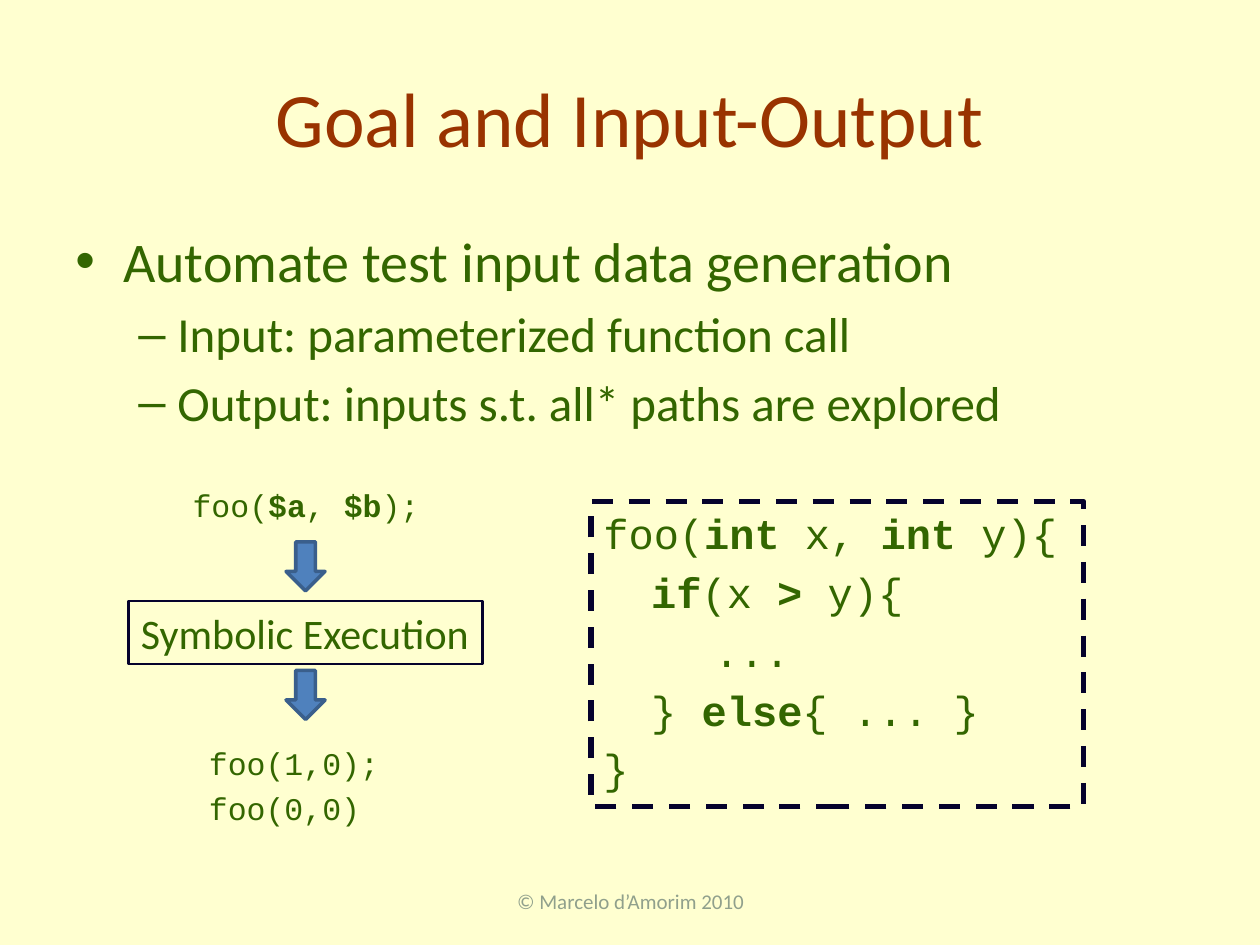
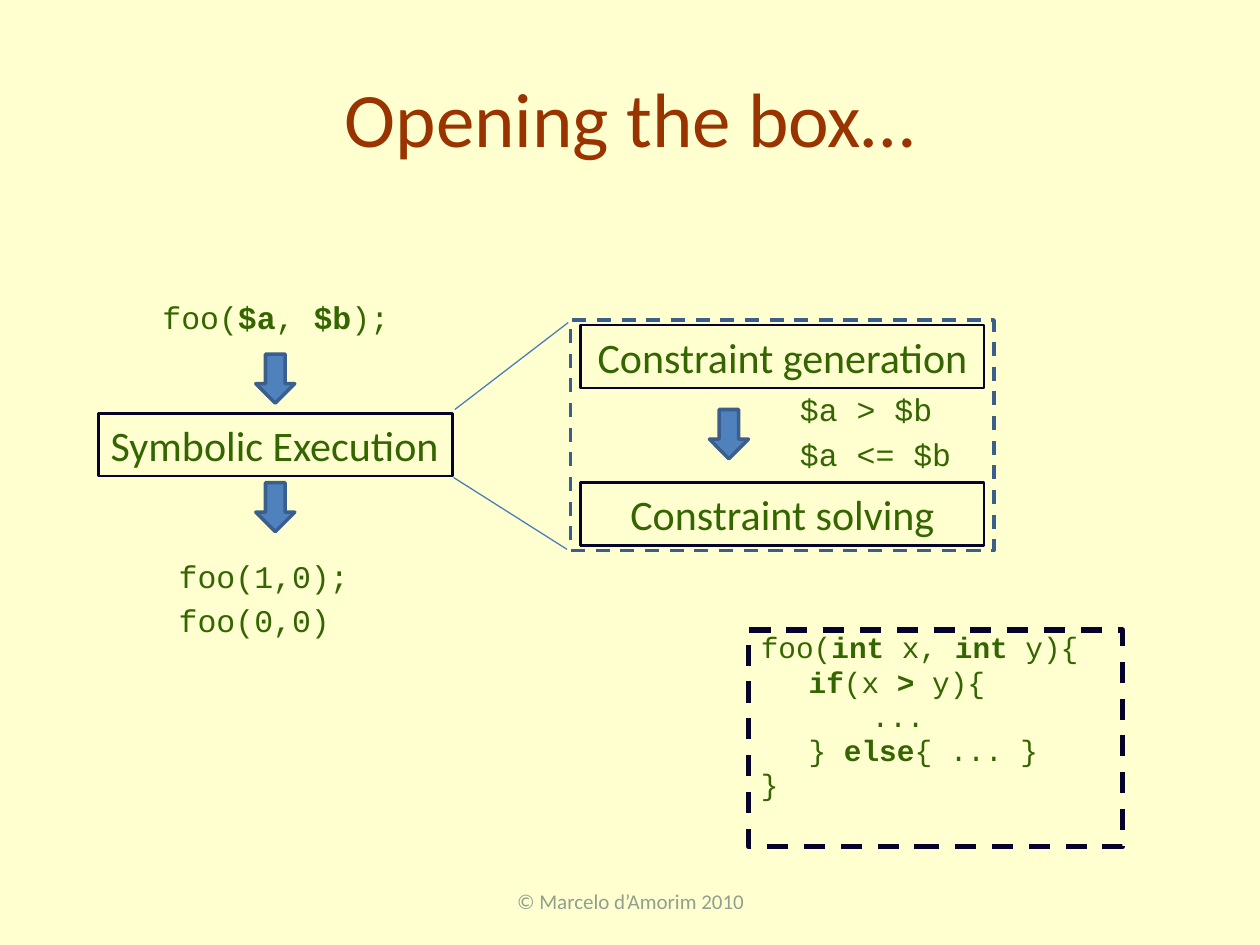
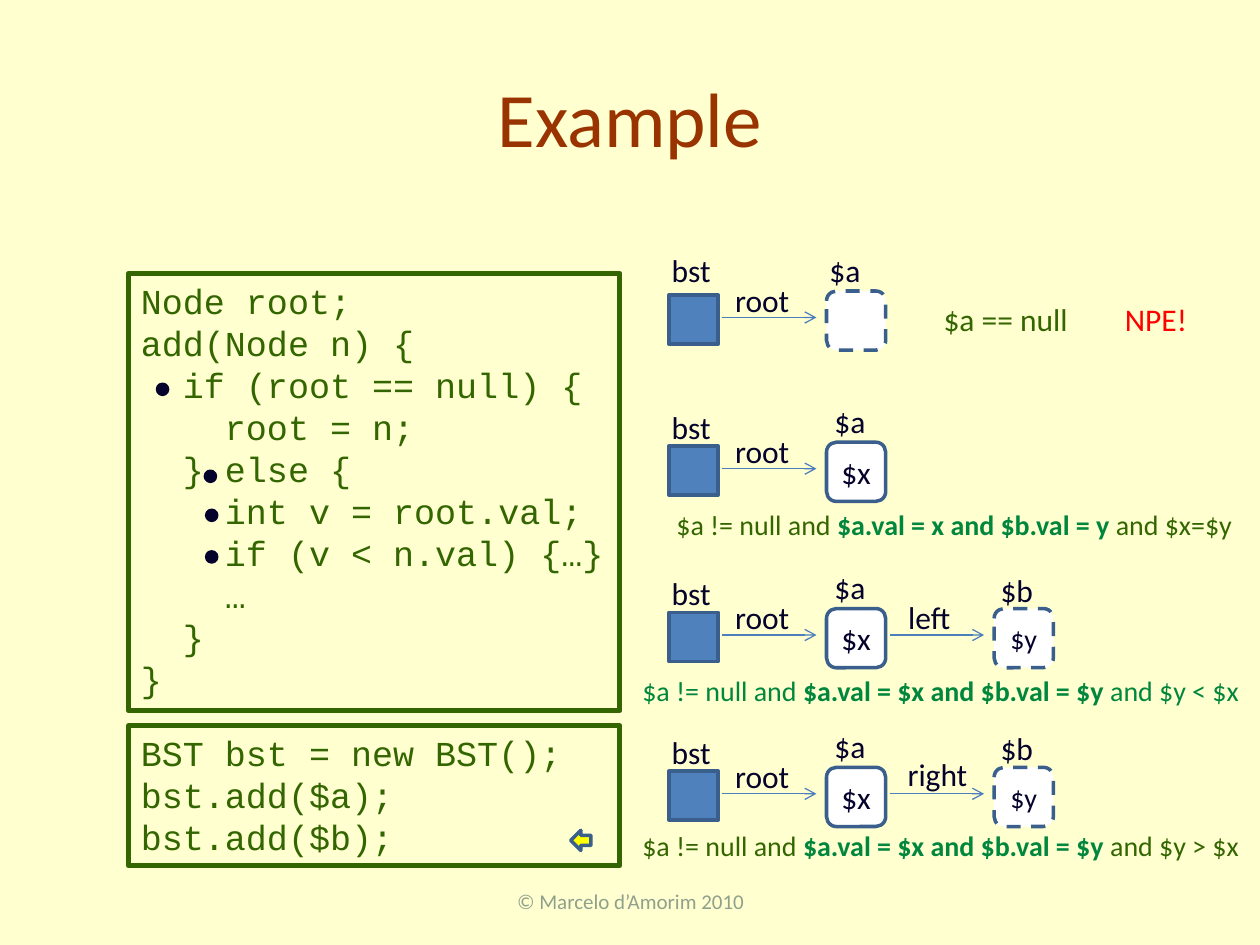
"""Build three slides on symbolic execution."""
from dataclasses import dataclass

from lxml import etree
from pptx import Presentation
from pptx import util as u
from pptx.dml import color
from pptx.enum import dml, shapes, text
from pptx.oxml import ns

COLORS = {
    "paper": "FFFFD0", "title": "993300", "body": "336600", "footer": "90A08C",
    "ink": "05022C", "blue": "4F81BD", "edge": "3A5F8C", "wire": "4B7EBC",
    "white": "FFFFFF", "yellow": "FFFF00", "green": "00863D", "red": "FF0000",
}
SANS, MONO = "Calibri", "Courier New"
SHAPE = shapes.MSO_SHAPE
CENTER = text.PP_ALIGN.CENTER
MIDDLE = text.MSO_ANCHOR.MIDDLE
FOO_CODE = ["foo(|int| x, |int| y){", "\t|if|(x |>| y){", "\t\t...", "\t} |else|{ ... }", "}"]
CODE_FORMAT = dict(face=MONO, indent=0.38, hang=0.38, gap=0.2)


@dataclass
class Bullet:
    words: str
    size: float
    mark: str
    indent: float
    hang: float
    level: int


@dataclass
class TreeState:
    top: float
    condition: str
    condition_at: tuple[float, float, float]
    tone: str = "body"
    value: str = ""
    branch: str = ""
    branch_width: float = 0.55
    branch_rise: float = 0.16
    bst_rise: float = 0.35
    a_left: float = 6.52


def rgb(name: str) -> color.RGBColor:
    """Return the named colour."""
    return color.RGBColor.from_string(COLORS[name])


def fill_para(para, words: str, *, size: float, face: str = SANS, tone: str = "body",
              bold_tone: str = "", align=None, indent: float = 0, hang: float = 0,
              mark: str = "", level: int = 0, before: float = 0, line: float = 0) -> None:
    """Fill a paragraph, with bold spans set between bars."""
    para.level = level
    para.alignment = align
    if before:
        para.space_before = u.Pt(before)
    if line:
        para.line_spacing = line
    if indent:
        props = para._p.get_or_add_pPr()
        props.set("marL", str(u.Inches(indent)))
        props.set("indent", str(u.Inches(-hang)))
        if mark:
            etree.SubElement(props, ns.qn("a:buFont")).set("typeface", "Arial")
            etree.SubElement(props, ns.qn("a:buChar")).set("char", mark)
    for index, piece in enumerate(words.split("|")):
        if piece:
            bold = index % 2 == 1
            span = para.add_run()
            span.text = piece
            span.font.name, span.font.size, span.font.bold = face, u.Pt(size), bold
            span.font.color.rgb = rgb(bold_tone if bold and bold_tone else tone)


def write(box, lines: list[str], *, size: float, anchor=text.MSO_ANCHOR.TOP,
          wrap: bool = True, gap: float = 0, **style) -> None:
    """Write lines of one format into a box."""
    frame = box.text_frame
    frame.word_wrap, frame.vertical_anchor = wrap, anchor
    for index, words in enumerate(lines):
        para = frame.add_paragraph() if index else frame.paragraphs[0]
        before = gap * size if index else 0
        fill_para(para, words, size=size, before=before, **{"align": text.PP_ALIGN.LEFT, **style})


def add_text(page, left: float, top: float, width: float, height: float,
             *lines: str, **style) -> None:
    """Add a text box."""
    box = page.shapes.add_textbox(*map(u.Inches, (left, top, width, height)))
    write(box, list(lines), **style)


def add_label(page, left: float, top: float, width: float, words: str, **style) -> None:
    """Add a one-line label that does not wrap."""
    add_text(page, left, top, width, 0.4, words,
             **{"size": 18, "wrap": False, "align": CENTER, "tone": "ink", **style})


def add_box(page, kind, left: float, top: float, width: float, height: float, *,
            fill: str = "", edge: str = "edge", weight: float = 2, dashed: bool = False):
    """Add a preset shape."""
    box = page.shapes.add_shape(kind, *map(u.Inches, (left, top, width, height)))
    box.shadow.inherit = False
    if fill:
        box.fill.solid()
        box.fill.fore_color.rgb = rgb(fill)
    else:
        box.fill.background()
    box.line.color.rgb = rgb(edge)
    box.line.width = u.Pt(weight)
    if dashed:
        box.line.dash_style = dml.MSO_LINE.DASH
    return box


def add_wire(page, start: tuple[float, float], end: tuple[float, float],
             arrow: bool = False) -> None:
    """Add a thin line, with an arrowhead at its end if asked."""
    wire = page.shapes.add_connector(shapes.MSO_CONNECTOR.STRAIGHT,
                                     *map(u.Inches, (*start, *end)))
    wire.line.color.rgb = rgb("wire")
    wire.line.width = u.Pt(0.75)
    props = wire._element.spPr
    if arrow:
        etree.SubElement(props.find(ns.qn("a:ln")), ns.qn("a:tailEnd")).set("type", "arrow")
    etree.SubElement(props, ns.qn("a:effectLst"))


def add_page(deck, title: str):
    """Add a slide with its background, title and footer."""
    page = deck.slides.add_slide(deck.slide_layouts[6])
    page.background.fill.solid()
    page.background.fill.fore_color.rgb = rgb("paper")
    add_text(page, 0.5, 0.3, 9, 1.25, title, size=44, tone="title",
             align=CENTER, anchor=MIDDLE)
    add_text(page, 3.42, 6.95, 3.17, 0.4, "© Marcelo d’Amorim 2010", size=12,
             tone="footer", align=CENTER, anchor=MIDDLE)
    return page


def add_step(page, left: float, top: float, width: float, words: str, align=CENTER) -> None:
    """Add a framed process step."""
    box = add_box(page, SHAPE.RECTANGLE, left, top, width, 0.5, edge="ink", weight=1.5)
    write(box, [words], size=24, align=align)


def add_down_arrow(page, left: float, top: float) -> None:
    """Add a block arrow between two steps."""
    add_box(page, SHAPE.DOWN_ARROW, left, top, 0.31, 0.39, fill="blue")


def add_execution_flow(page, left: float, top: float) -> None:
    """Draw the flow from symbolic call to concrete calls around its step."""
    add_step(page, left, top, 2.81, "Symbolic Execution", align=text.PP_ALIGN.LEFT)
    for offset in (-0.47, 0.55):
        add_down_arrow(page, left + 1.25, top + offset)
    add_text(page, left + 0.41, top - 0.96, 2.01, 0.4, "foo(|$a|, |$b|);",
             size=18, wrap=False, **CODE_FORMAT)
    add_text(page, left + 0.54, top + 1.09, 1.56, 0.77, "foo(1,0);", "foo(0,0)",
             size=18, wrap=False, **CODE_FORMAT)


def add_foo_code(page, left: float, top: float, width: float, height: float,
                 size: float, line: float = 0) -> None:
    """Draw the dashed listing of foo."""
    box = add_box(page, SHAPE.RECTANGLE, left, top, width, height,
                  edge="ink", weight=3, dashed=True)
    write(box, FOO_CODE, size=size, line=line, **CODE_FORMAT)


def add_node(page, left: float, top: float, value: str, size: float, dashed: bool) -> None:
    """Add a tree node, dashed when it is still symbolic."""
    node = add_box(page, SHAPE.ROUNDED_RECTANGLE, left, top, 0.47, 0.47,
                   fill="white", dashed=dashed)
    if value:
        write(node, [value], size=size, tone="ink", wrap=False, align=CENTER, anchor=MIDDLE)


def add_tree_state(page, state: TreeState) -> None:
    """Draw one heap state with its path condition."""
    top = state.top
    wire_y = top + 0.18
    add_box(page, SHAPE.RECTANGLE, 5.31, top, 0.39, 0.39, fill="blue")
    add_node(page, 6.56, top - 0.03, state.value, 18, dashed=not state.value)
    add_wire(page, (5.73, wire_y), (6.48, wire_y), arrow=True)
    add_label(page, 5.23, top - state.bst_rise, 0.51, "bst")
    add_label(page, state.a_left, top - 0.4, 0.45, "$a")
    add_label(page, 5.73, top - 0.16, 0.64, "root")
    if state.branch:
        add_node(page, 7.89, top - 0.03, "$y", 16, dashed=True)
        add_wire(page, (7.06, wire_y), (7.81, wire_y), arrow=True)
        add_label(page, 7.84, top - 0.38, 0.46, "$b")
        add_label(page, 7.1, top - state.branch_rise, state.branch_width, state.branch)
    left, condition_top, width = state.condition_at
    add_text(page, left, condition_top, width, 0.37, state.condition,
             size=16 if state.value else 18, tone=state.tone, bold_tone="green")


def build_goal(deck) -> None:
    """Build the goal slide."""
    page = add_page(deck, "Goal and Input-Output")
    bullets = [
        Bullet("Automate test input data generation", 32, "•", 0.38, 0.38, 0),
        Bullet("Input: parameterized function call", 28, "–", 0.81, 0.31, 1),
        Bullet("Output: inputs s.t. all* paths are explored", 28, "–", 0.81, 0.31, 1),
    ]
    frame = page.shapes.add_textbox(*map(u.Inches, (0.5, 1.75, 9, 2.16))).text_frame
    frame.word_wrap = True
    for index, item in enumerate(bullets):
        para = frame.add_paragraph() if index else frame.paragraphs[0]
        fill_para(para, item.words, size=item.size, mark=item.mark, indent=item.indent,
                  hang=item.hang, level=item.level, before=0.2 * item.size if index else 0)
    add_foo_code(page, 4.69, 3.98, 3.91, 2.42, 24)
    add_execution_flow(page, 1.02, 4.77)


def build_opening(deck) -> None:
    """Build the slide that opens the box."""
    page = add_page(deck, "Opening the box…")
    add_execution_flow(page, 0.78, 3.28)
    add_wire(page, (3.61, 3.25), (4.51, 2.56))
    add_wire(page, (3.6, 3.79), (4.5, 4.36))
    add_step(page, 4.61, 2.58, 3.2, "Constraint generation")
    add_step(page, 4.61, 3.83, 3.2, "Constraint solving")
    add_down_arrow(page, 5.63, 3.25)
    add_box(page, SHAPE.RECTANGLE, 4.53, 2.54, 3.36, 1.83, dashed=True)
    add_text(page, 6.25, 3.05, 1.41, 0.77, "$a > $b", "$a <= $b",
             size=18, wrap=False, **CODE_FORMAT)
    add_foo_code(page, 5.94, 5, 2.97, 1.72, 16.8, line=0.8)


def build_example(deck) -> None:
    """Build the binary search tree example."""
    page = add_page(deck, "Example")
    add_code = [
        "Node root;", "add(Node n) {", "  if (root == null) {", "    root = n;",
        "  } else {", "    int v = root.val;", "    if (v < n.val) {…}", "    …", "  }", "}",
    ]
    test_code = ["BST bst = new BST();", "bst.add($a);", "bst.add($b);"]
    for top, height, lines in ((2.17, 3.47, add_code), (5.76, 1.11, test_code)):
        listing = add_box(page, SHAPE.RECTANGLE, 1.02, top, 3.9, height,
                          edge="body", weight=3)
        write(listing, lines, size=20, face=MONO)
    add_box(page, SHAPE.LEFT_ARROW, 4.53, 6.59, 0.16, 0.16, fill="yellow")
    for left, top in ((1.25, 3.05), (1.63, 3.74), (1.64, 4.05), (1.64, 4.38)):
        add_box(page, SHAPE.OVAL, left, top, 0.08, 0.08, fill="ink", edge="ink")
    states = [
        TreeState(2.34, "$a == null", (7.39, 2.33, 1.3), bst_rise=0.4, a_left=6.48),
        TreeState(3.54, "$a != null and |$a.val = x and $b.val = y |and $x=$y",
                  (5.27, 3.98, 4.73), value="$x"),
        TreeState(4.86, "$a != null and |$a.val = $x and $b.val = $y |and $y < $x",
                  (5, 5.3, 5), tone="green", value="$x", branch="left"),
        TreeState(6.12, "$a != null and |$a.val = $x and $b.val = $y |and $y > $x",
                  (5, 6.53, 5), value="$x", branch="right", branch_width=0.68,
                  branch_rise=0.18),
    ]
    for state in states:
        add_tree_state(page, state)
    add_label(page, 8.83, 2.33, 0.7, "NPE!", tone="red", align=text.PP_ALIGN.LEFT)


def main() -> None:
    """Build and save the deck."""
    deck = Presentation()
    deck.slide_width, deck.slide_height = u.Inches(10), u.Inches(7.5)
    build_goal(deck)
    build_opening(deck)
    build_example(deck)
    deck.save("out.pptx")


if __name__ == "__main__":
    main()
